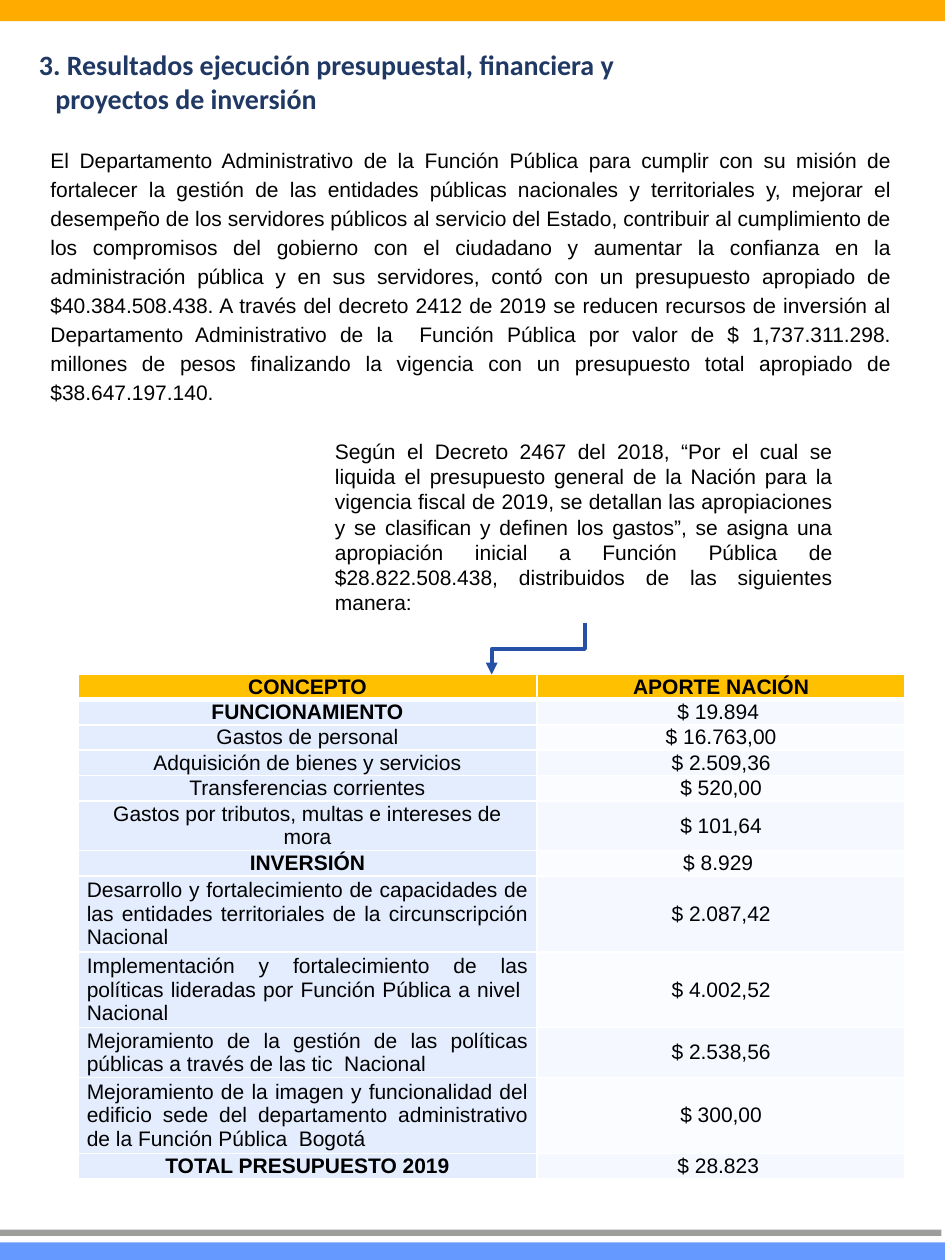
"""Build the budget execution slide with its introduction, decree note and allocation table."""
from dataclasses import dataclass

from lxml import etree
from pptx import Presentation
from pptx import util as u
from pptx.dml.color import RGBColor
from pptx.enum import shapes, text
from pptx.oxml import ns

COLORS = {
    "orange": "FFAB00", "blue": "6699FF", "gray": "9D9D9C", "title": "203864",
    "text": "000000", "header": "FFC000", "concept": "E4EDFE", "odd": "F5F8FF",
    "even": "FAFCFF", "border": "FFFFFF", "arrow": "2651A6",
}
ROW_HEIGHTS = {1: 14.5, 2: 28.4, 3: 43.4}
CENTER, JUSTIFY, LEFT = text.PP_ALIGN.CENTER, text.PP_ALIGN.JUSTIFY, text.PP_ALIGN.LEFT

TITLE = "3. Resultados ejecución presupuestal, financiera y proyectos de inversión"
INTRO = (
    "El Departamento Administrativo de la Función Pública para cumplir con su misión de "
    "fortalecer la gestión de las entidades públicas nacionales y territoriales y, mejorar el "
    "desempeño de los servidores públicos al servicio del Estado, contribuir al cumplimiento de "
    "los compromisos del gobierno con el ciudadano y aumentar la confianza en la "
    "administración pública y en sus servidores, contó con un presupuesto apropiado de "
    "$40.384.508.438. A través del decreto 2412 de 2019 se reducen recursos de inversión al "
    "Departamento Administrativo de la  Función Pública por valor de $ 1,737.311.298. "
    "millones de pesos finalizando la vigencia con un presupuesto total apropiado de "
    "$38.647.197.140."
)
DECREE = (
    "Según el Decreto 2467 del 2018, “Por el cual se liquida el presupuesto general de la "
    "Nación para la vigencia fiscal de 2019, se detallan las apropiaciones y se clasifican y "
    "definen los gastos”, se asigna una apropiación inicial a Función Pública de "
    "$28.822.508.438, distribuidos de las siguientes manera:"
)


@dataclass
class Bar:
    left: float
    top: float
    width: float
    height: float
    color: str


@dataclass
class Row:
    concept: str
    value: str
    lines: int = 1
    bold: bool = False
    align: text.PP_ALIGN = CENTER


BARS = [
    Bar(0, 0, 541.4, 12.2, "orange"),
    Bar(-0.7, 709.9, 544.3, 10.8, "blue"),
    Bar(-0.7, 702.7, 538.6, 3.6, "gray"),
]
ROWS = [
    Row("CONCEPTO", "APORTE NACIÓN", bold=True),
    Row("FUNCIONAMIENTO", "$ 19.894 ", bold=True),
    Row("Gastos de personal", "$ 16.763,00"),
    Row("Adquisición de bienes y servicios", "$ 2.509,36"),
    Row("Transferencias corrientes", "$ 520,00"),
    Row("Gastos por tributos, multas e intereses de mora", "$ 101,64", 2),
    Row("INVERSIÓN", "$ 8.929 ", bold=True),
    Row("Desarrollo y fortalecimiento de capacidades de las entidades territoriales "
        "de la circunscripción Nacional ", "$ 2.087,42", 3, align=JUSTIFY),
    Row("Implementación y fortalecimiento de las políticas lideradas por Función Pública "
        "a nivel  Nacional", "$ 4.002,52", 3, align=JUSTIFY),
    Row("Mejoramiento de la gestión de las políticas públicas a través de las tic  Nacional",
        "$ 2.538,56", 2, align=JUSTIFY),
    Row("Mejoramiento de la imagen y funcionalidad del edificio sede del departamento "
        "administrativo de la Función Pública  Bogotá", "$ 300,00", 3, align=JUSTIFY),
    Row("TOTAL PRESUPUESTO 2019", "$ 28.823 ", bold=True),
]


def rgb(name: str) -> RGBColor:
    return RGBColor.from_string(COLORS[name])


def write(tf, content: str, align: text.PP_ALIGN, size: float = 12, font: str = "Arial",
          color: str = "text", bold: bool = False):
    tf.text = content
    p = tf.paragraphs[0]
    p.alignment = align
    for r in p.runs:
        r.font.size, r.font.name, r.font.bold = u.Pt(size), font, bold
        r.font.color.rgb = rgb(color)
    return p


def place(sp, left: float, top: float, width: float, height: float) -> None:
    sp.left, sp.top, sp.width, sp.height = map(u.Pt, (left, top, width, height))
    tf = sp.text_frame
    tf.word_wrap = True
    tf.auto_size = text.MSO_AUTO_SIZE.NONE
    tf.vertical_anchor = text.MSO_ANCHOR.TOP


def indent(p, margin: float, first: float) -> None:
    pPr = p._p.get_or_add_pPr()
    pPr.set("marL", str(u.Pt(margin)))
    pPr.set("indent", str(u.Pt(first)))
    etree.SubElement(pPr, ns.qn("a:buNone"))


def draw_bar(s, bar: Bar) -> None:
    sp = s.shapes.add_shape(shapes.MSO_SHAPE.RECTANGLE, u.Pt(bar.left), u.Pt(bar.top),
                            u.Pt(bar.width), u.Pt(bar.height))
    sp.shadow.inherit = False
    sp.fill.solid()
    sp.fill.fore_color.rgb = rgb(bar.color)
    sp.line.fill.background()


def draw_borders(cell, top: float, bottom: float) -> None:
    tcPr = cell._tc.get_or_add_tcPr()
    for side, width in (("L", 1), ("R", 1), ("T", top), ("B", bottom)):
        ln = etree.SubElement(tcPr, ns.qn(f"a:ln{side}"), w=str(u.Pt(width)))
        fill = etree.SubElement(ln, ns.qn("a:solidFill"))
        etree.SubElement(fill, ns.qn("a:srgbClr"), val=COLORS["border"])


def fill_cell(cell, content: str, align: text.PP_ALIGN, bold: bool, color: str, row: int) -> None:
    cell.margin_left = cell.margin_right = u.Pt(5)
    cell.margin_top = cell.margin_bottom = 0
    cell.vertical_anchor = text.MSO_ANCHOR.MIDDLE
    write(cell.text_frame, content, align, bold=bold)
    draw_borders(cell, 3 if row == 1 else 1, 3 if row == 0 else 1)
    cell.fill.solid()
    cell.fill.fore_color.rgb = rgb(color)


def draw_table(s, rows: list[Row]) -> None:
    heights = [ROW_HEIGHTS[row.lines] for row in rows]
    table = s.shapes.add_table(len(rows), 2, u.Pt(44.6), u.Pt(385.2), u.Pt(472.7),
                               u.Pt(sum(heights))).table
    table.columns[0].width, table.columns[1].width = u.Pt(262.3), u.Pt(210.4)
    for i, row in enumerate(rows):
        table.rows[i].height = u.Pt(heights[i])
        header = i == 0
        value_color = "header" if header else ("odd" if i % 2 else "even")
        fill_cell(table.cell(i, 0), row.concept, row.align, row.bold,
                  "header" if header else "concept", i)
        fill_cell(table.cell(i, 1), row.value, CENTER, header, value_color, i)


def draw_arrow(s, left: float, top: float, width: float, height: float) -> None:
    cn = s.shapes.add_connector(shapes.MSO_CONNECTOR.ELBOW, u.Pt(left), u.Pt(top),
                                u.Pt(left + width), u.Pt(top + height))
    cn.line.color.rgb = rgb("arrow")
    cn.line.width = u.Pt(2.25)
    spPr = cn._element.spPr
    spPr.find(ns.qn("a:xfrm")).set("rot", "5400000")
    etree.SubElement(spPr.find(ns.qn("a:ln")), ns.qn("a:tailEnd"), type="triangle")
    etree.SubElement(spPr, ns.qn("a:effectLst"))


def main() -> None:
    prs = Presentation()
    prs.slide_width, prs.slide_height = u.Pt(540), u.Pt(720)
    s = prs.slides.add_slide(prs.slide_layouts[1])
    for bar in BARS:
        draw_bar(s, bar)

    title = s.shapes.title
    place(title, 0, 23.8, 410.4, 46.1)
    p = write(title.text_frame, TITLE, LEFT, 16, "Calibri", "title", True)
    p.space_before = u.Pt(4.2)
    indent(p, 24.5, -9.4)

    body = s.placeholders[1]
    place(body, 21.6, 78.5, 495.4, 139.7)
    p = write(body.text_frame, INTRO, JUSTIFY)
    p.line_spacing, p.space_before = 1.15, u.Pt(0)
    indent(p, 0, 0)

    draw_table(s, ROWS)
    note = s.shapes.add_textbox(0, 0, 0, 0)
    place(note, 184.3, 247, 298.8, 108.7)
    write(note.text_frame, DECREE, JUSTIFY)
    draw_arrow(s, 293, 344.2, 29.2, 53.3)
    prs.save("out.pptx")


if __name__ == "__main__":
    main()
